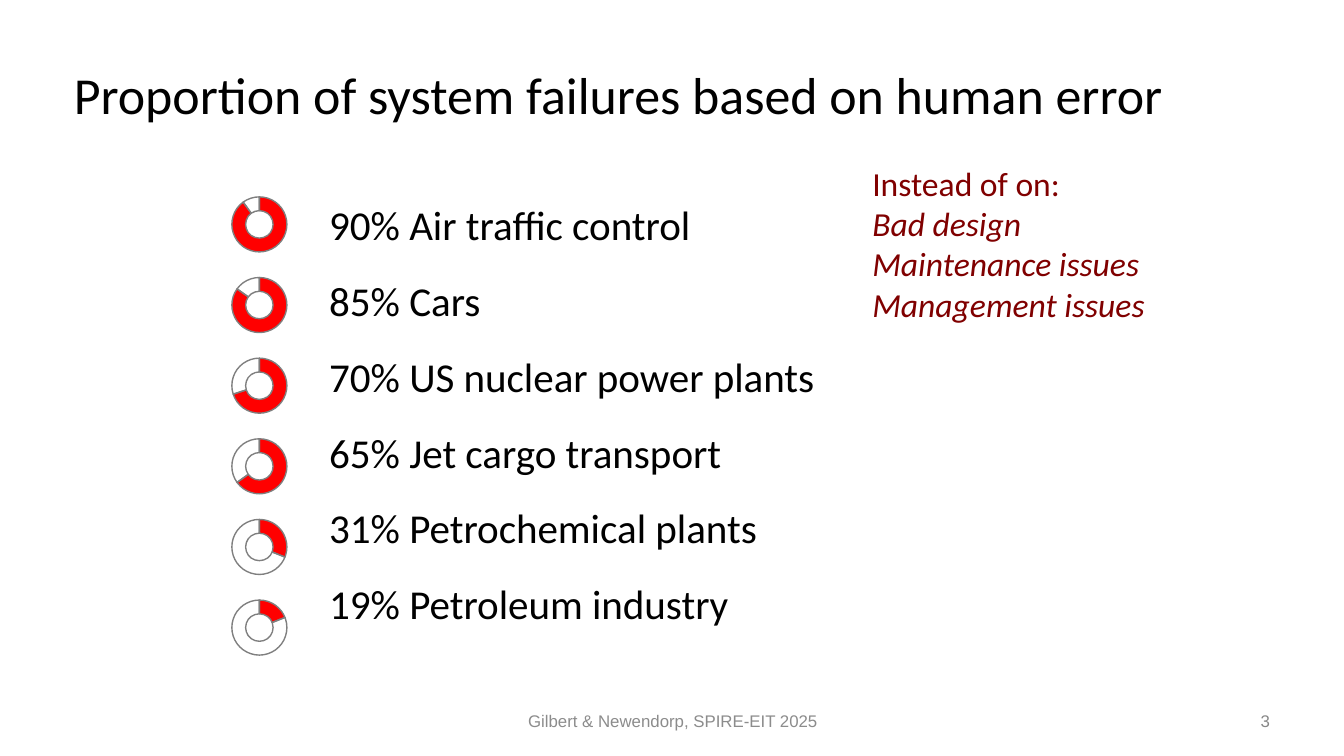
"""Build a slide on the share of system failures put down to human error."""
from dataclasses import dataclass

from lxml.etree import SubElement as Sub
from pptx import Presentation
from pptx.chart.data import CategoryChartData as Data
from pptx.dml.color import RGBColor as Color
from pptx.enum.chart import XL_CHART_TYPE as Kind
from pptx.enum.text import MSO_ANCHOR as Anchor, PP_ALIGN as Align
from pptx.oxml.ns import qn
from pptx.slide import Slide
from pptx.util import Inches, Pt


@dataclass(frozen=True)
class Theme:
    sans: str = "Calibri"
    plain: str = "Arial"
    black: str = "000000"
    red: str = "FF0000"
    dark: str = "800000"
    edge: str = "7F7F7F"
    gray: str = "888888"
    pale: str = "8C8C8C"
    title: float = 27.8
    body: float = 22
    note: float = 18
    small: float = 9
    chart: float = 10


@dataclass(frozen=True)
class Cause:
    share: int
    field: str


@dataclass(frozen=True)
class Block:
    box: tuple[float, float, float, float]
    lines: tuple[str, ...]
    size: float
    color: str
    font: str = Theme.sans
    anchor: Anchor = Anchor.TOP
    align: Align = Align.LEFT
    wrap: bool = True
    pitch: float = 1
    gap: float = 0
    slant: bool = False


LOOK = Theme()
CAUSES = (
    Cause(90, "Air traffic control"),
    Cause(85, "Cars"),
    Cause(70, "US nuclear power plants"),
    Cause(65, "Jet cargo transport"),
    Cause(31, "Petrochemical plants"),
    Cause(19, "Petroleum industry"),
)
NOTES = ("Instead of on:", "Bad design", "Maintenance issues", "Management issues")
BLOCKS = (
    Block((0.5, 0.23, 9, 0.94), ("Proportion of system failures based on human error",),
          LOOK.title, LOOK.black, anchor=Anchor.MIDDLE),
    Block((2.4, 1.31, 5.04, 3.71), tuple(f"{c.share}% {c.field}" for c in CAUSES),
          LOOK.body, LOOK.black, pitch=1.35, gap=5),
    Block((6.44, 1.16, 2.35, 1.32), NOTES, LOOK.note, LOOK.dark, wrap=False, slant=True),
    Block((9.32, 5.24, 0.18, 0.25), ("3",), LOOK.small, LOOK.gray, LOOK.plain,
          Anchor.MIDDLE, Align.RIGHT, wrap=False),
    Block((3.42, 5.21, 3.17, 0.3), ("Gilbert & Newendorp, SPIRE-EIT 2025",),
          LOOK.small, LOOK.pale, LOOK.plain, Anchor.MIDDLE, Align.CENTER),
)
WIDTH = 10
HEIGHT = WIDTH * 9 / 16
LEFT, TOP, STEP, SIDE = 1.72, 1.46, 0.6, 0.42
INSET = 0.05


def add_text(slide: Slide, block: Block) -> None:
    """Place a block of text, one paragraph per line."""
    frame = slide.shapes.add_textbox(*map(Inches, block.box)).text_frame
    frame.word_wrap = block.wrap
    frame.vertical_anchor = block.anchor
    frame.margin_left = frame.margin_right = Inches(INSET)
    frame.margin_top = frame.margin_bottom = Inches(INSET)
    frame.text = "\n".join(block.lines)
    for i, para in enumerate(frame.paragraphs):
        para.alignment = block.align
        para.line_spacing = block.pitch
        para.space_before = Pt(block.gap if i else 0)
        font = para.font
        font.name, font.size = block.font, Pt(block.size)
        font.color.rgb = Color.from_string(block.color)
        font.italic = block.slant and i > 0


def fill_frame(plot: object) -> None:
    """Stretch the inner plot over nearly the whole chart frame."""
    layout = plot.find(qn("c:layout"))
    if layout is None:
        layout = Sub(plot, qn("c:layout"))
        plot.insert(0, layout)
    hand = Sub(layout, qn("c:manualLayout"))
    for tag, val in (("layoutTarget", "inner"), ("xMode", "edge"), ("yMode", "edge"),
                     ("x", "0.01"), ("y", "0.01"), ("w", "0.98"), ("h", "0.98")):
        Sub(hand, qn(f"c:{tag}")).set("val", val)


def add_ring(slide: Slide, top: float, share: int) -> None:
    """Draw a ring whose red part is the given share of a hundred."""
    data = Data()
    data.categories = ["1", "2"]
    data.add_series("Series 1", (share, 100 - share))
    box = map(Inches, (LEFT, top, SIDE, SIDE))
    chart = slide.shapes.add_chart(Kind.DOUGHNUT, *box, data).chart
    chart.has_legend = chart.has_title = False
    chart.font.name, chart.font.size = LOOK.plain, Pt(LOOK.chart)
    chart.font.color.rgb = Color.from_string(LOOK.black)
    plot = chart.plots[0]
    plot.vary_by_categories = False
    plot.has_data_labels = False
    row = plot.series[0]
    for part in (row.format, row.points[0].format, row.points[1].format):
        part.fill.solid()
        part.fill.fore_color.rgb = Color.from_string(LOOK.red)
        part.line.color.rgb = Color.from_string(LOOK.edge)
        part.line.width = Pt(0.75)
    row.points[1].format.fill.background()
    fill_frame(chart.element.find(f".//{qn('c:plotArea')}"))


def main() -> None:
    """Build and save the slide."""
    deck = Presentation()
    deck.slide_width, deck.slide_height = Inches(WIDTH), Inches(HEIGHT)
    slide = deck.slides.add_slide(deck.slide_layouts[6])
    for block in BLOCKS:
        add_text(slide, block)
    for i, cause in enumerate(CAUSES):
        add_ring(slide, TOP + i * STEP, cause.share)
    deck.save("out.pptx")


if __name__ == "__main__":
    main()
